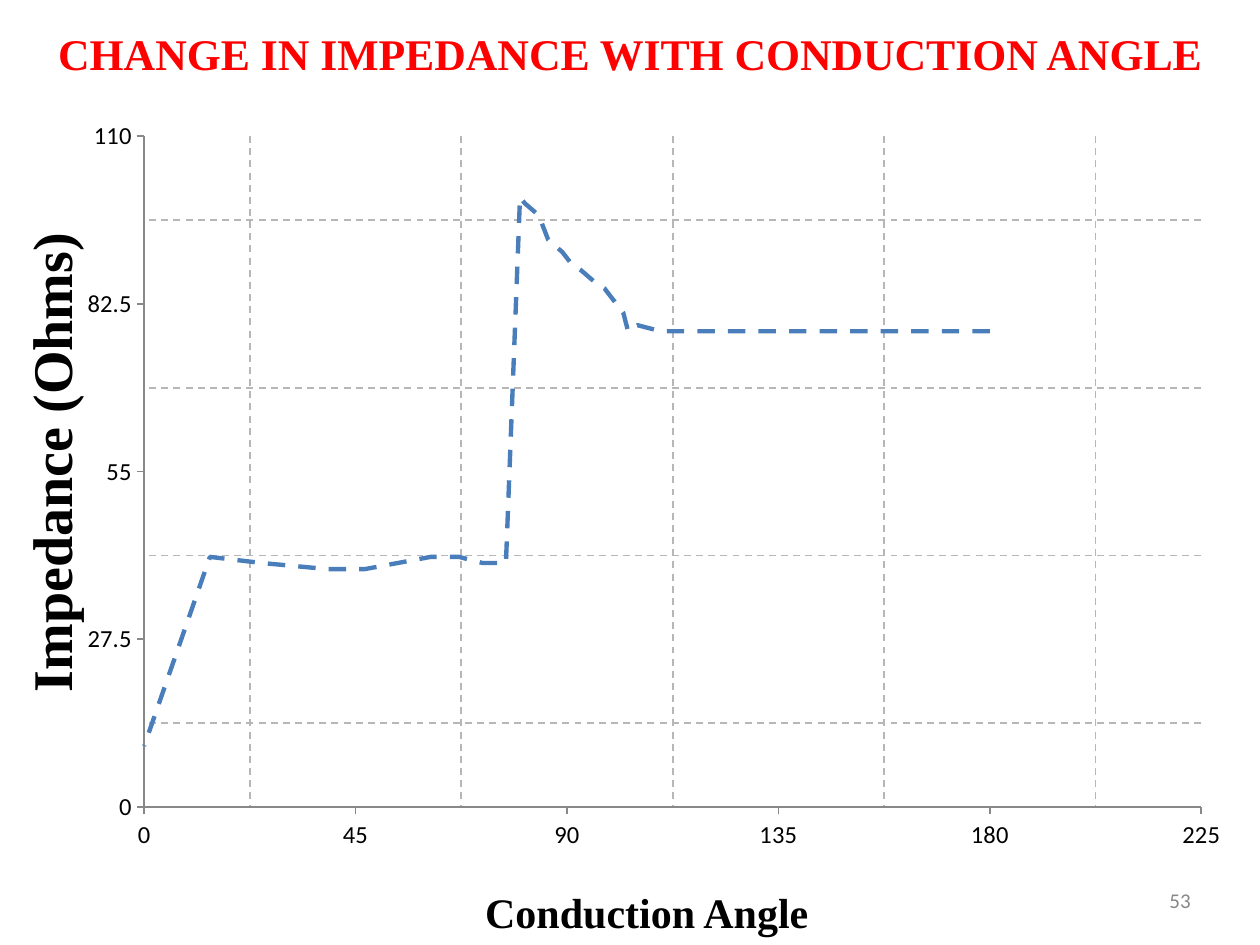
from lxml import etree
from pptx import Presentation
from pptx.chart.data import XyChartData
from pptx.dml.color import RGBColor
from pptx.enum.chart import XL_CHART_TYPE, XL_TICK_MARK
from pptx.enum.dml import MSO_LINE
from pptx.enum.text import MSO_ANCHOR, PP_ALIGN
from pptx.oxml import parse_xml
from pptx.oxml.ns import nsdecls, qn
from pptx.util import Inches, Pt

SCATTER = XL_CHART_TYPE.XY_SCATTER_LINES_NO_MARKERS
OUTSIDE = XL_TICK_MARK.OUTSIDE
DASH = MSO_LINE.DASH
MIDDLE = MSO_ANCHOR.MIDDLE
LEFT, CENTER, RIGHT = PP_ALIGN.LEFT, PP_ALIGN.CENTER, PP_ALIGN.RIGHT

COLORS = {
    "title": "FF0000",
    "text": "000000",
    "number": "888888",
    "axis": "888888",
    "grid": "B7B7B7",
    "curve": "4A7EBB",
}
SERIF, SANS = "Times New Roman", "Calibri"

# Conduction angle in degrees, impedance in ohms
POINTS = [
    (180, 78), (163, 78), (160, 78), (149, 78), (140, 78), (134, 78),
    (127, 78), (116, 78), (110, 78), (105, 79), (103, 78), (102, 81),
    (100, 83), (98, 85), (96, 86), (93, 88), (91, 89), (89, 91),
    (86, 93), (85, 95), (84, 97), (81, 99), (80, 100), (77, 40),
    (74, 40), (72, 40), (67, 41), (61, 41), (47, 39), (39, 39),
    (25, 40), (14, 41), (0, 10),
]


def color(name):
    return RGBColor.from_string(COLORS[name])


def write(box, text, size, font, color_name, bold=False, align=LEFT):
    """Fill a text shape with one formatted paragraph and narrow margins."""
    frame = box.text_frame
    frame.margin_left = frame.margin_right = Inches(0.05)
    frame.margin_top = frame.margin_bottom = Inches(0.05)
    frame.word_wrap = True
    para = frame.paragraphs[0]
    para.text = text
    para.alignment = align
    para.font.size = Pt(size)
    para.font.name = font
    para.font.bold = bold
    para.font.color.rgb = color(color_name)
    return frame


deck = Presentation()
deck.slide_width, deck.slide_height = Inches(10), Inches(7.5)
page = deck.slides.add_slide(deck.slide_layouts[5])

# Title
title = page.shapes.title
title.left, title.top = 0, Inches(0.01)
title.width, title.height = deck.slide_width, Inches(0.82)
frame = write(title, "CHANGE IN IMPEDANCE WITH CONDUCTION ANGLE",
              25, SERIF, "title", True, CENTER)
frame.vertical_anchor = MIDDLE

# Slide number
number = page.shapes.add_textbox(Inches(9.21), Inches(7), Inches(0.29), Inches(0.29))
frame = write(number, "53", 12, SANS, "number", align=RIGHT)
frame.vertical_anchor = MIDDLE
frame.word_wrap = False

# Chart
data = XyChartData()
curve = data.add_series("Series 1")
for angle, impedance in POINTS:
    curve.add_data_point(angle, impedance)
chart = page.shapes.add_chart(SCATTER, Inches(0.53), Inches(0.86),
                              Inches(9.17), Inches(5.97), data).chart
chart.has_legend = False
chart.has_title = False
chart.font.name = SANS
chart.font.size = Pt(14)
chart.font.color.rgb = color("text")

line = chart.plots[0].series[0]
line.smooth = False
line.format.line.color.rgb = color("curve")
line.format.line.width = Pt(2.5)
line.format.line.dash_style = DASH

for axis, step, steps in ((chart.category_axis, 45, 5), (chart.value_axis, 27.5, 4)):
    axis.minimum_scale, axis.maximum_scale = 0, step * steps
    axis.major_unit = step
    axis.has_major_gridlines = False
    axis.has_minor_gridlines = True
    axis.major_tick_mark = OUTSIDE
    axis.tick_labels.number_format = "0.####"
    axis.tick_labels.number_format_is_linked = False
    axis.format.line.color.rgb = color("axis")
    axis.format.line.width = Pt(1)
    axis_xml = axis.format.line._get_or_add_ln().getparent().getparent()
    # Minor gridlines fall halfway between the labels
    minor_unit = etree.Element(qn("c:minorUnit"), val=str(step / 2))
    axis_xml.find(qn("c:majorUnit")).addnext(minor_unit)
    grid = axis_xml.find(qn("c:minorGridlines"))
    grid.append(parse_xml(
        f'<c:spPr {nsdecls("c", "a")}><a:ln w="12700"><a:solidFill>'
        f'<a:srgbClr val="{COLORS["grid"]}"/></a:solidFill>'
        '<a:prstDash val="dash"/></a:ln></c:spPr>'))

plot_area = chart.element.find(".//" + qn("c:plotArea"))
for layout in plot_area.findall(qn("c:layout")):
    plot_area.remove(layout)
position = "".join(f'<c:{name} val="{share}"/>' for name, share in
                   (("x", 0.067), ("y", 0.037), ("w", 0.915), ("h", 0.892)))
plot_area.insert(0, parse_xml(
    f'<c:layout {nsdecls("c")}><c:manualLayout><c:layoutTarget val="inner"/>'
    f'<c:xMode val="edge"/><c:yMode val="edge"/>{position}'
    '</c:manualLayout></c:layout>'))

# Axis captions
for text, size, left, top, width, height, turn in (
    ("Conduction Angle", 24, 3.8, 6.99, 3.15, 0.51, 0),
    ("Impedance (Ohms)", 32, -1.57, 3.29, 3.91, 0.6, 270),
):
    caption = page.shapes.add_textbox(Inches(left), Inches(top),
                                      Inches(width), Inches(height))
    caption.rotation = turn
    write(caption, text, size, SERIF, "text", True)

deck.save("out.pptx")
